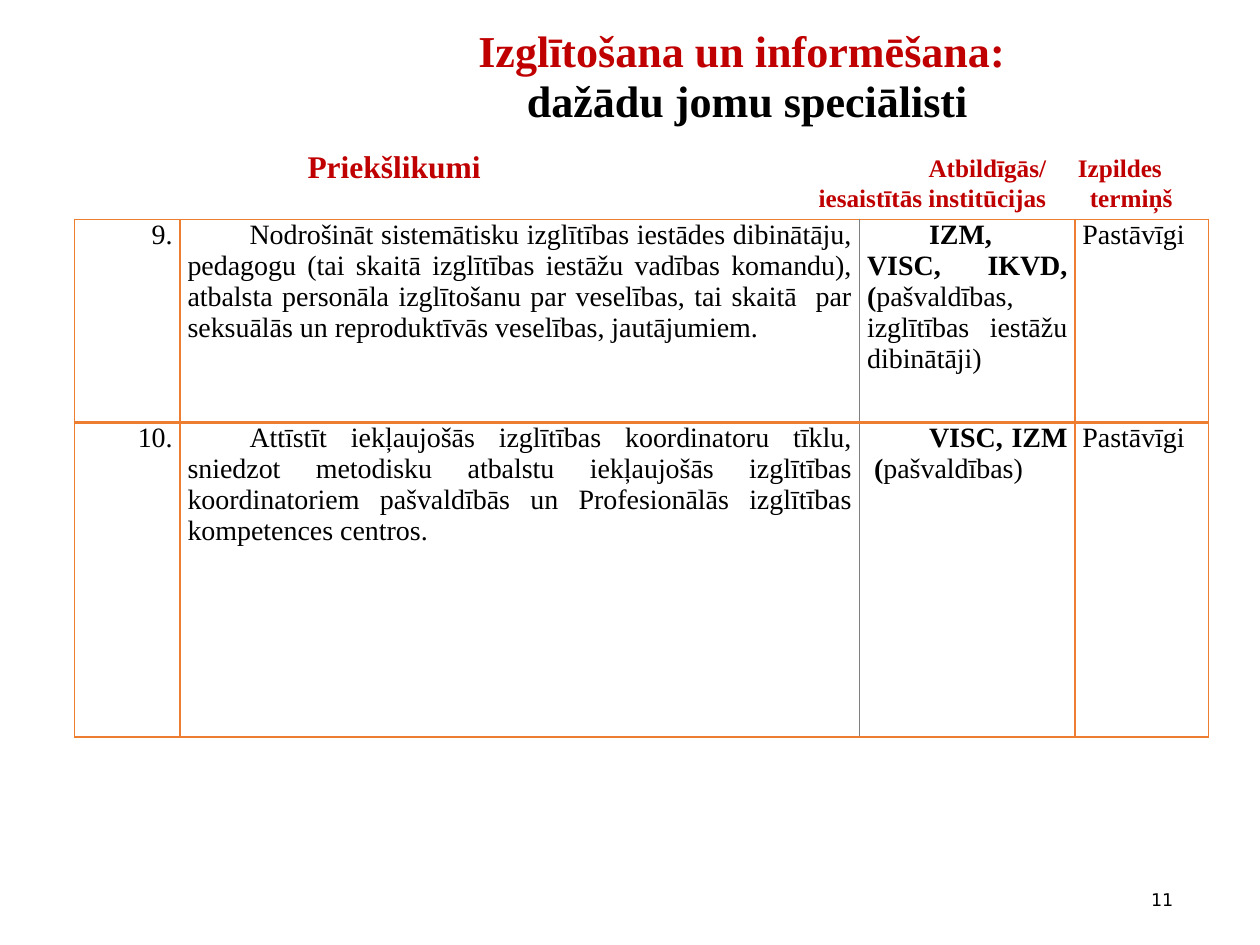
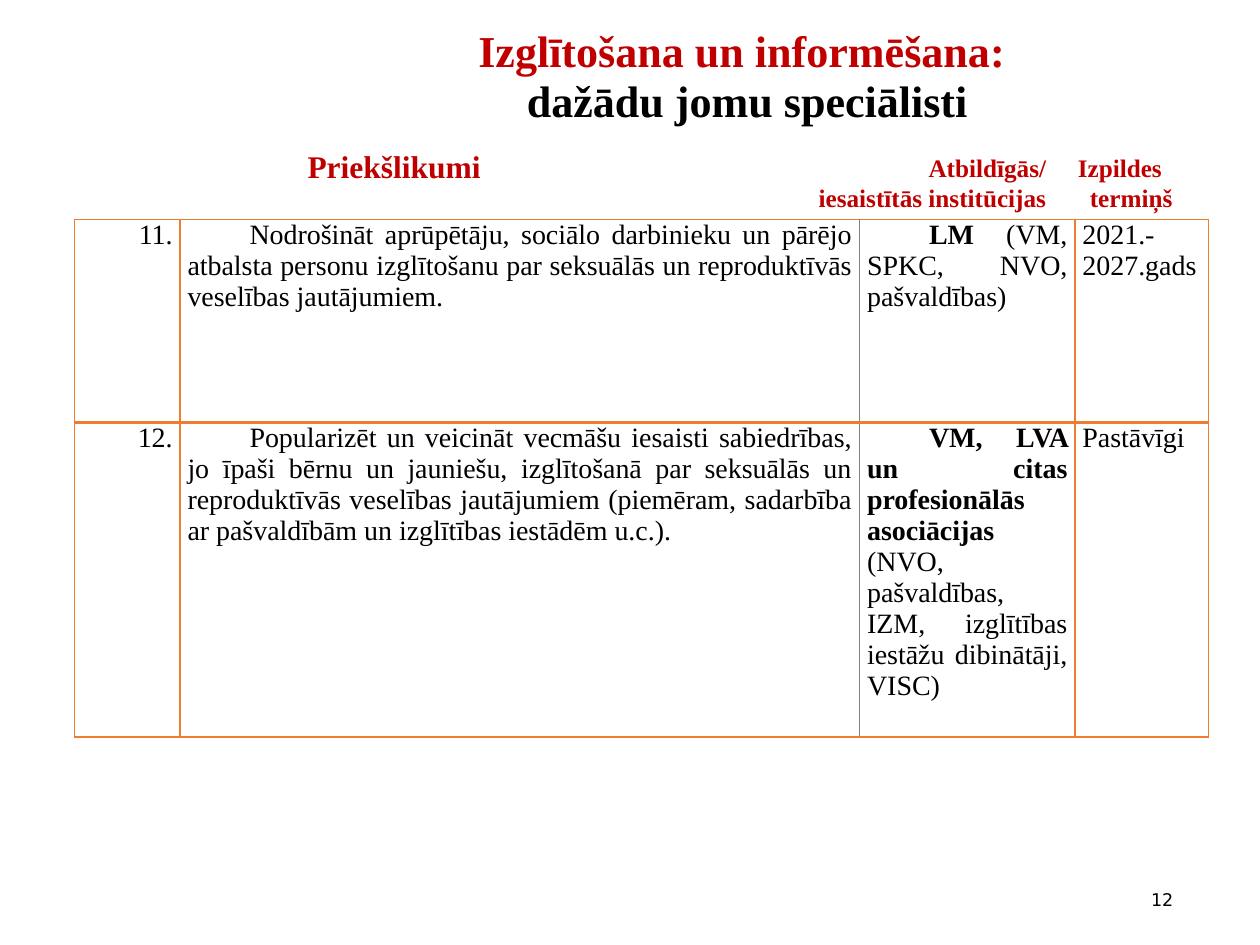
"""Builds two slides of proposals on education and information."""
from lxml.etree import SubElement
from pptx import Presentation
from pptx.dml.color import RGBColor
from pptx.enum.text import MSO_ANCHOR, PP_ALIGN
from pptx.oxml import parse_xml
from pptx.oxml.ns import nsdecls
from pptx.util import Cm, Pt

RED = RGBColor(0xC0, 0x00, 0x00)
BLACK = RGBColor(0x00, 0x00, 0x00)
WHITE = RGBColor(0xFF, 0xFF, 0xFF)
ORANGE = RGBColor(0xED, 0x7D, 0x31)
GREY = RGBColor(0x80, 0x80, 0x80)
SERIF, SANS = "Times New Roman", "DejaVu Sans"
LEFT, RIGHT, MID, FULL = (PP_ALIGN.LEFT, PP_ALIGN.RIGHT,
                          PP_ALIGN.CENTER, PP_ALIGN.JUSTIFY)

TITLE = [("Izglītošana un informēšana: ", RED), ("dažādu jomu speciālisti", BLACK)]
HEADS = [
    (["Priekšlikumi"], (6.2, 2.96, 5, 0.8), 18, LEFT, 0),
    (["Atbildīgās/", "iesaistītās institūcijas"], (15.09, 3.07, 6, 1.2), 14.4, RIGHT, 0),
    (["Izpildes", "termiņš"], (21.73, 3.07, 2.5, 1.2), 14.4, LEFT, 0.24),
]
PAGES = {
    11: [
        ("9.",
         "Nodrošināt sistemātisku izglītības iestādes dibinātāju, pedagogu (tai skaitā "
         "izglītības iestāžu vadības komandu), atbalsta personāla izglītošanu par "
         "veselības, tai skaitā  par seksuālās un reproduktīvās veselības, jautājumiem.",
         ("IZM, VISC, IKVD, (", "pašvaldības, izglītības iestāžu dibinātāji)"),
         "Pastāvīgi"),
        ("10.",
         "Attīstīt iekļaujošās izglītības koordinatoru tīklu, sniedzot metodisku "
         "atbalstu iekļaujošās izglītības koordinatoriem pašvaldībās un "
         "Profesionālās izglītības kompetences centros.",
         ("VISC, IZM  (", "pašvaldības)"),
         "Pastāvīgi"),
    ],
    12: [
        ("11.",
         "Nodrošināt aprūpētāju, sociālo darbinieku un pārējo atbalsta personu "
         "izglītošanu par seksuālās un reproduktīvās veselības jautājumiem.",
         ("LM", " (VM, SPKC, NVO, pašvaldības)"),
         "2021.-2027.gads"),
        ("12.",
         "Popularizēt un veicināt vecmāšu iesaisti sabiedrības, jo īpaši bērnu un "
         "jauniešu, izglītošanā par seksuālās un reproduktīvās veselības jautājumiem "
         "(piemēram, sadarbība ar pašvaldībām un izglītības iestādēm u.c.).",
         ("VM, LVA un citas profesionālās asociācijas",
          " (NVO, pašvaldības, IZM, izglītības iestāžu dibinātāji, VISC)"),
         "Pastāvīgi"),
    ],
}
COLS = [2.13, 13.7, 4.34, 2.69]
ROWS = [4.09, 6.35]
ALIGNS = [RIGHT, FULL, FULL, FULL]
DENTS = [0, 1.25, 1.25, 0]


def write(para, text, size=16, color=BLACK, bold=False, font=SERIF,
          align=LEFT, space=1.0, dent=0):
    """Adds one run of text to a paragraph and formats both."""
    para.alignment = align
    para.line_spacing = space
    if dent:
        para._p.get_or_add_pPr().set("indent", str(Cm(dent)))
    run = para.add_run()
    run.text = text
    run.font.size, run.font.name, run.font.bold = Pt(size), font, bold
    run.font.color.rgb = color


def add_box(slide, place, pad=0.0):
    """Adds a wrapping text box and returns its frame."""
    frame = slide.shapes.add_textbox(*map(Cm, place)).text_frame
    frame.word_wrap = True
    frame.margin_left = frame.margin_right = Cm(pad)
    frame.margin_top = frame.margin_bottom = Cm(pad / 2)
    return frame


def next_para(frame, index):
    """Returns the first paragraph, or a new one after it."""
    return frame.add_paragraph() if index else frame.paragraphs[0]


def edge(cell, index, side, color, width):
    """Draws one border of a cell."""
    line = parse_xml(f'<a:ln{side} {nsdecls("a")} w="{Pt(width)}"><a:solidFill>'
                     f'<a:srgbClr val="{color}"/></a:solidFill></a:ln{side}>')
    cell._tc.get_or_add_tcPr().insert(index, line)


def add_grid(slide, rows):
    """Adds the table of proposals."""
    table = slide.shapes.add_table(len(ROWS), len(COLS), Cm(1.5), Cm(4.42),
                                   Cm(sum(COLS)), Cm(sum(ROWS))).table
    table.first_row = table.horz_banding = False
    for col, width in zip(table.columns, COLS):
        col.width = Cm(width)
    for r, (row, high) in enumerate(zip(rows, ROWS)):
        table.rows[r].height = Cm(high)
        for c, text in enumerate(row):
            cell = table.cell(r, c)
            cell.margin_left = cell.margin_right = Cm(0.15)
            cell.margin_top = cell.margin_bottom = 0
            cell.fill.solid()
            cell.fill.fore_color.rgb = WHITE
            parts = text if isinstance(text, tuple) else ("", text)
            for part, bold in zip(parts, (True, False)):
                if part:
                    write(cell.text_frame.paragraphs[0], part, bold=bold,
                          align=ALIGNS[c], dent=DENTS[c])
            thin, plain = (GREY, 0.5), (ORANGE, 1)
            seam = (ORANGE, 2)
            sides = {"L": thin if c == 2 else plain, "R": thin if c == 1 else plain,
                     "T": seam if r else plain, "B": plain if r else seam}
            for i, (side, style) in enumerate(sides.items()):
                edge(cell, i, side, *style)


def add_page(deck, number, rows):
    """Adds one slide with title, column heads, table and number."""
    slide = deck.slides.add_slide(deck.slide_layouts[6])
    frame = add_box(slide, (5.77, 0.45, 18.59, 2.4), pad=0.25)
    for i, (text, color) in enumerate(TITLE):
        write(next_para(frame, i), text, size=25.2, color=color, bold=True,
              align=MID, space=0.93)
    for lines, place, size, align, dent in HEADS:
        frame = add_box(slide, place)
        for i, text in enumerate(lines):
            write(next_para(frame, i), text, size=size, color=RED, bold=True,
                  align=align, dent=dent * i)
    add_grid(slide, rows)
    frame = add_box(slide, (21.74, 17.63, 2.16, 1.02), pad=0.25)
    frame.vertical_anchor = MSO_ANCHOR.MIDDLE
    write(frame.paragraphs[0], str(number), size=10, font=SANS, align=RIGHT)


def main():
    """Builds and saves the deck."""
    deck = Presentation()
    deck.slide_width, deck.slide_height = Cm(25.4), Cm(19.05)
    for number, rows in PAGES.items():
        add_page(deck, number, rows)
    deck.save("out.pptx")


if __name__ == "__main__":
    main()
